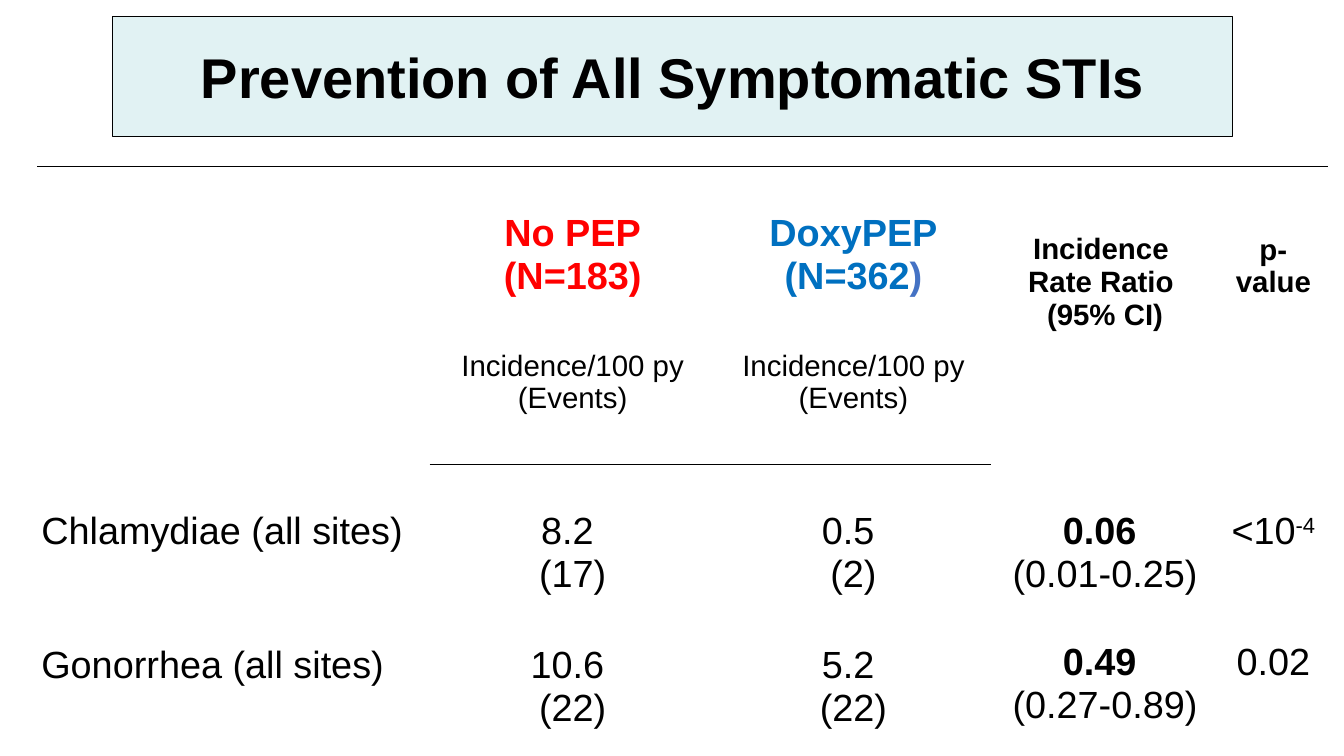
import pptx
import pptx.dml.color
import pptx.enum.shapes
import pptx.enum.text
import pptx.util
from pptx.oxml import parse_xml

PX = 9144  # 100 px to the inch
NS = "http://schemas.openxmlformats.org/drawingml/2006/main"
ALIGN = pptx.enum.text.PP_ALIGN
ANCHOR = pptx.enum.text.MSO_ANCHOR
BLACK, RED, BLUE = "000000", "FF0000", "0070C0"


def rgb(value):
    return pptx.dml.color.RGBColor.from_string(value)


def add_text(tf, text, size=27, bold=False, color=BLACK, align=ALIGN.CENTER, same_line=False, raised=False):
    """Add a run on a new paragraph, or on the last one if same_line."""
    p = tf.paragraphs[-1]
    if p.runs and not same_line:
        p = tf.add_paragraph()
    p.alignment = align
    r = p.add_run()
    r.text = text
    r.font.name = "Arial"
    r.font.size = pptx.util.Pt(size)
    r.font.bold = bold
    r.font.color.rgb = rgb(color)
    if raised:
        r.font._element.set("baseline", "30000")


prs = pptx.Presentation()
prs.slide_width, prs.slide_height = 1333 * PX, 750 * PX
s = prs.slides.add_slide(prs.slide_layouts[6])

# Results table
COLS = [389, 284, 273, 226, 108]
ROWS = [133, 162, 133, 133]
LINE = 43  # height of one 27 pt line
frame = s.shapes.add_table(len(ROWS), len(COLS), 37 * PX, 165 * PX, sum(COLS) * PX, sum(ROWS) * PX)
table = frame.table
table.first_row = table.horz_banding = False
table._tbl.tblPr.find(f"{{{NS}}}tableStyleId").text = "{2D5ABB26-0587-4C30-8999-92F81FD0307C}"
for column, width in zip(table.columns, COLS):
    column.width = width * PX
for row, height in zip(table.rows, ROWS):
    row.height = height * PX

RULES = {0: "lnT", 1: "lnB"}  # above and below the two header rows
for i in range(len(ROWS)):
    for j in range(len(COLS)):
        cell = table.cell(i, j)
        cell.margin_left = cell.margin_right = 4 * PX
        cell.margin_top = cell.margin_bottom = 0
        cell.vertical_anchor = ANCHOR.MIDDLE
        if i in RULES:
            cell._tc.get_or_add_tcPr().append(parse_xml(
                f'<a:{RULES[i]} xmlns:a="{NS}" w="12700"><a:solidFill>'
                f'<a:srgbClr val="{BLACK}"/></a:solidFill></a:{RULES[i]}>'))
        else:
            cell.fill.solid()
            cell.fill.fore_color.rgb = rgb("FFFFFF")

for j in (0, 3, 4):
    table.cell(0, j).merge(table.cell(1, j))

# Header
for j, group, count, color in [(1, "No PEP", "(N=183)", RED), (2, "DoxyPEP", "(N=362", BLUE)]:
    cell = table.cell(0, j)
    cell.margin_top = LINE * PX
    for text in (group, count):
        add_text(cell.text_frame, text, bold=True, color=color)
    for text in ("Incidence/100 py", "(Events)"):
        add_text(table.cell(1, j).text_frame, text, size=21)
add_text(table.cell(0, 2).text_frame, ")", bold=True, color="4472C4", same_line=True)

for j, lines, bottom in [(3, ["Incidence ", "Rate Ratio ", "(95% CI)"], 65), (4, ["p-value"], 97)]:
    cell = table.cell(0, j)
    cell.margin_bottom = bottom * PX
    for text in lines:
        add_text(cell.text_frame, text, size=21, bold=True)

# Infections
INFECTIONS = [
    ("Chlamydiae (all sites)", ["8.2 ", "(17)"], ["0.5 ", "(2)"], ["0.06 ", "(0.01-0.25)"], ["<10"]),
    ("Gonorrhea (all sites)", ["10.6 ", "(22)"], ["5.2 ", "(22)"], ["0.49 ", "(0.27-0.89)"], ["0.02"]),
]
for i, (name, *results) in enumerate(INFECTIONS, start=2):
    add_text(table.cell(i, 0).text_frame, name, align=ALIGN.LEFT)
    for j, lines in enumerate(results, start=1):
        cell = table.cell(i, j)
        if len(lines) == 2:
            cell.margin_top = LINE * PX
        for k, text in enumerate(lines):
            add_text(cell.text_frame, text, bold=(j == 3 and k == 0))
add_text(table.cell(2, 4).text_frame, "-4", same_line=True, raised=True)
for j in (3, 4):
    cell = table.cell(3, j)
    cell.vertical_anchor = ANCHOR.TOP
    cell.margin_top = LINE * PX

# Title
title = s.shapes.add_shape(pptx.enum.shapes.MSO_SHAPE.RECTANGLE, 112 * PX, 16 * PX, 1110 * PX, 119 * PX)
title.shadow.inherit = False
title.fill.solid()
title.fill.fore_color.rgb = rgb("E1F2F3")
title.line.color.rgb = rgb(BLACK)
title.line.width = pptx.util.Pt(0.75)
tf = title.text_frame
tf.word_wrap = True
tf.vertical_anchor = ANCHOR.MIDDLE
tf.margin_left = tf.margin_top = tf.margin_right = tf.margin_bottom = 0
add_text(tf, "Prevention of All Symptomatic STIs", size=40, bold=True)

prs.save("out.pptx")
